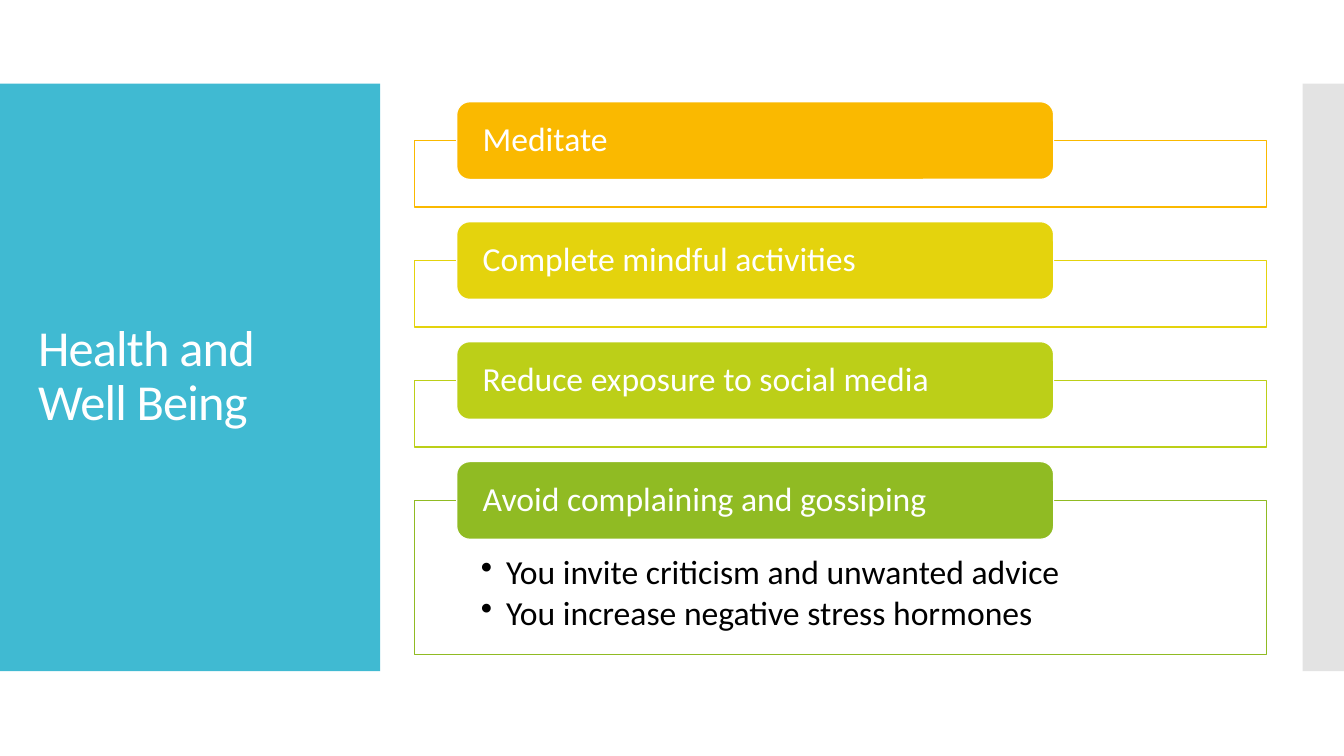
from pptx import Presentation
from pptx import util as u
from pptx.dml.color import RGBColor
from pptx.enum import shapes, text
from pptx.oxml.ns import qn
from lxml import etree

COLORS = {
    "title": "40BAD2", "edge": "C8C8C8", "white": "FFFFFF", "black": "000000",
    "amber": "FAB900", "yellow": "E4D30D", "lime": "BCCF18", "green": "90BB23",
}
HABITS = [
    ("Meditate", "amber", []),
    ("Complete mindful activities", "yellow", []),
    ("Reduce exposure to social media", "lime", []),
    ("Avoid complaining and gossiping", "green", [
        "You invite criticism and unwanted advice",
        "You increase negative stress hormones",
    ]),
]
BAND_TOP, BAND_HEIGHT = 0.83, 5.83
PANEL_LEFT, PANEL_WIDTH = 4.11, 8.45
PILL_LEFT, PILL_WIDTH, PILL_HEIGHT = 4.53, 5.92, 0.77
FIRST_PILL_TOP, ROW_PITCH = 1.01, 1.19


def color(name):
    return RGBColor.from_string(COLORS[name])


def add_block(page, kind, area, fill, line=None, opacity=100):
    block = page.shapes.add_shape(kind, *map(u.Inches, area))
    block.shadow.inherit = False
    block.fill.solid()
    block.fill.fore_color.rgb = color(fill)
    if opacity < 100:
        tint = block.fill._xPr.find(".//" + qn("a:srgbClr"))
        etree.SubElement(tint, qn("a:alpha"), val=str(opacity * 1000))
    if line:
        block.line.color.rgb = color(line)
        block.line.width = u.Pt(0.85)
    else:
        block.line.fill.background()
    return block


def write(box, lines, size, ink, insets, anchor=text.MSO_ANCHOR.MIDDLE, after=0):
    frame = box.text_frame
    frame.word_wrap = True
    frame.vertical_anchor = anchor
    (frame.margin_left, frame.margin_top,
     frame.margin_right, frame.margin_bottom) = map(u.Inches, insets)
    frame.text = "\n".join(lines)
    for para in frame.paragraphs:
        para.alignment = text.PP_ALIGN.LEFT
        para.line_spacing = 0.9
        para.space_after = u.Pt(after)
        para.font.name = "Calibri"
        para.font.size = u.Pt(size)
        para.font.color.rgb = color(ink)
    return frame.paragraphs


def add_bullet(para):
    props = para._p.get_or_add_pPr()
    indent = u.Inches(0.25)
    props.set("marL", str(indent))
    props.set("indent", str(-indent))
    bullet = etree.Element(qn("a:buChar"), char="•")
    props.find(qn("a:defRPr")).addprevious(bullet)


def add_title(page):
    box = page.shapes.add_textbox(*map(u.Inches, (0.28, 1.23, 3.22, 5.03)))
    paras = write(box, ["Health and Well Being"], 36, "white", (0.1, 0.05, 0.1, 0.05))
    for span in paras[0].runs:
        span.font._element.set("spc", "-60")


def add_habit(page, row, heading, hue, details):
    top = FIRST_PILL_TOP + row * ROW_PITCH
    height = 1.53 if details else 0.66
    panel = add_block(page, shapes.MSO_SHAPE.RECTANGLE,
                      (PANEL_LEFT, top + PILL_HEIGHT / 2, PANEL_WIDTH, height),
                      "white", hue, 90)
    if details:
        for para in write(panel, details, 24, "black", (0.66, 0.55, 0.66, 0.19),
                          text.MSO_ANCHOR.TOP, 3):
            add_bullet(para)
    pill = add_block(page, shapes.MSO_SHAPE.ROUNDED_RECTANGLE,
                     (PILL_LEFT, top, PILL_WIDTH, PILL_HEIGHT), hue, "white")
    write(pill, [heading], 24, "white", (0.22, 0, 0.22, 0))


def main():
    """Build the health and well-being slide."""
    deck = Presentation()
    deck.slide_width, deck.slide_height = u.Inches(13.33), u.Inches(7.5)
    page = deck.slides.add_slide(deck.slide_layouts[6])
    rectangle = shapes.MSO_SHAPE.RECTANGLE
    add_block(page, rectangle, (0, BAND_TOP, 3.77, BAND_HEIGHT), "title")
    add_block(page, rectangle, (12.92, BAND_TOP, 0.41, BAND_HEIGHT), "edge", opacity=50)
    add_title(page)
    for row, habit in enumerate(HABITS):
        add_habit(page, row, *habit)
    deck.save("out.pptx")


if __name__ == "__main__":
    main()
